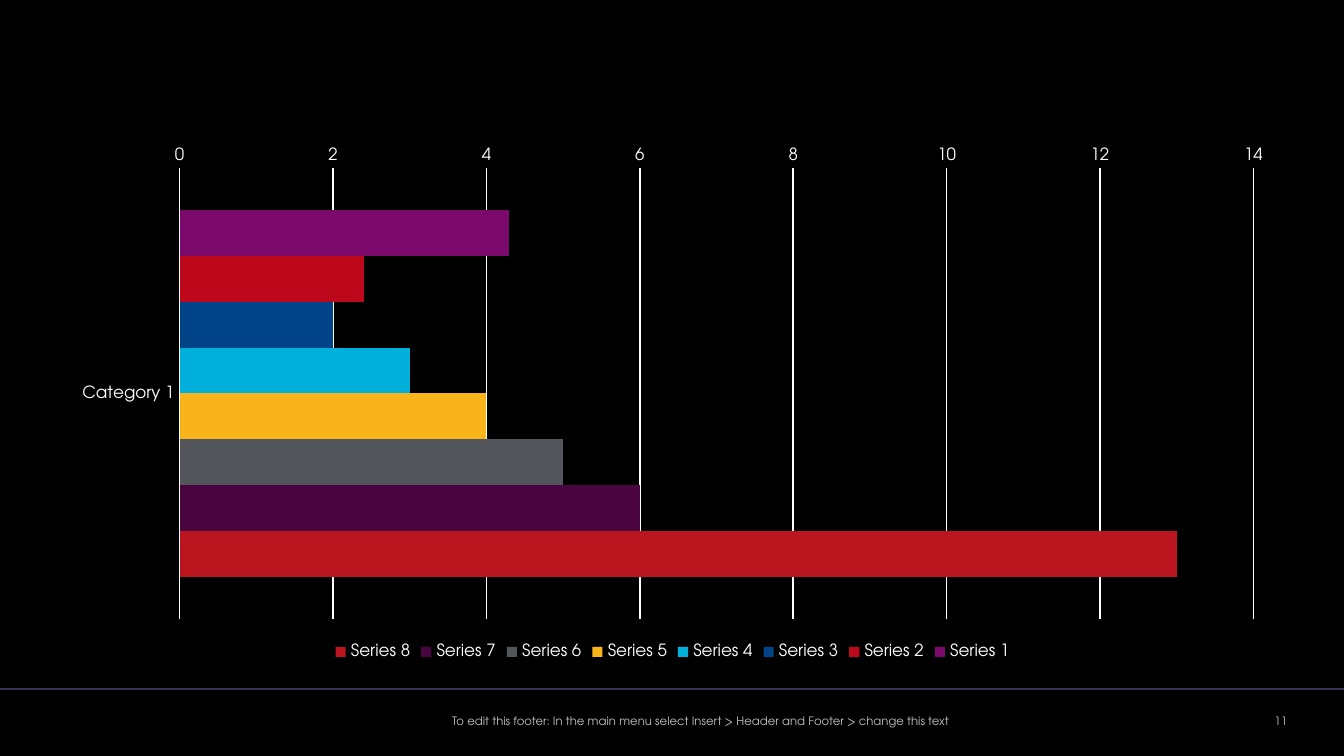
from pptx import Presentation
from pptx.chart.data import CategoryChartData
from pptx.dml.color import RGBColor
from pptx.enum.chart import XL_CHART_TYPE, XL_LEGEND_POSITION, XL_TICK_MARK
from pptx.enum.shapes import MSO_CONNECTOR
from pptx.enum.text import MSO_ANCHOR, PP_ALIGN
from pptx.oxml.ns import qn
from pptx.util import Cm, Pt
from lxml import etree

BAR_CLUSTERED = XL_CHART_TYPE.BAR_CLUSTERED
LEGEND_BOTTOM = XL_LEGEND_POSITION.BOTTOM
NO_TICK = XL_TICK_MARK.NONE
STRAIGHT = MSO_CONNECTOR.STRAIGHT
MIDDLE = MSO_ANCHOR.MIDDLE
CENTER, RIGHT = PP_ALIGN.CENTER, PP_ALIGN.RIGHT

FONT = "TeX Gyre Adventor"
BLACK, WHITE, GREY, NAVY = "000000", "FFFFFF", "BFBFBF", "2F364D"
FOOTER_TOP, FOOTER_HEIGHT = Cm(13.21), Cm(0.84)
FOOTER = ("To edit this footer: In the main menu select Insert > "
          "Header and Footer > change this text")
SERIES = [
    (4.3, "7B096B"),
    (2.4, "BD081B"),
    (2, "004386"),
    (3, "00B0DA"),
    (4, "F9B41B"),
    (5, "52565A"),
    (6, "4A0540"),
    (13, "BB1520"),
]


def rgb(value):
    return RGBColor.from_string(value)


def style_font(font, size, color):
    font.name = FONT
    font.size = Pt(size)
    font.color.rgb = rgb(color)


def style_line(line, color, width):
    line.color.rgb = rgb(color)
    line.width = Pt(width)


def style_axis(axis):
    axis.major_tick_mark = axis.minor_tick_mark = NO_TICK
    style_font(axis.tick_labels.font, 9, WHITE)


def add_bar_chart(slide):
    data = CategoryChartData()
    data.categories = ["Category 1"]
    for number, (value, _) in enumerate(SERIES, 1):
        data.add_series(f"Series {number}", [value])
    chart = slide.shapes.add_chart(
        BAR_CLUSTERED, Cm(1.09), Cm(2.59), Cm(23.24), Cm(9.98), data).chart
    chart.has_title = False
    style_font(chart.font, 9, WHITE)

    bars = chart.plots[0]
    bars.gap_width = 182
    bars.vary_by_categories = False
    for series, (_, color) in zip(bars.series, SERIES):
        series.format.fill.solid()
        series.format.fill.fore_color.rgb = rgb(color)

    categories, values = chart.category_axis, chart.value_axis
    style_axis(categories)
    categories.reverse_order = True
    style_line(categories.format.line, WHITE, 0.75)
    style_axis(values)
    values.format.line.fill.background()
    values.has_major_gridlines = True
    style_line(values.major_gridlines.format.line, WHITE, 0.75)

    chart.has_legend = True
    chart.legend.position = LEGEND_BOTTOM
    chart.legend.include_in_layout = False
    style_font(chart.legend.font, 9, WHITE)


def add_rule(slide):
    rule = slide.shapes.add_connector(
        STRAIGHT, 0, Cm(13.03), Cm(25.48), Cm(13.03))
    style_line(rule.line, NAVY, 1)
    etree.SubElement(rule._element.spPr, qn("a:effectLst"))


def add_footer_text(slide, text, left, width, alignment):
    frame = slide.shapes.add_textbox(
        left, FOOTER_TOP, width, FOOTER_HEIGHT).text_frame
    frame.word_wrap = True
    frame.vertical_anchor = MIDDLE
    frame.text = text
    paragraph = frame.paragraphs[0]
    paragraph.alignment = alignment
    style_font(paragraph.runs[0].font, 6.2, GREY)
    return frame


def main():
    deck = Presentation()
    deck.slide_width, deck.slide_height = Cm(25.4), Cm(14.29)
    slide = deck.slides.add_slide(deck.slide_layouts[6])
    slide.background.fill.solid()
    slide.background.fill.fore_color.rgb = rgb(BLACK)

    add_rule(slide)
    add_bar_chart(slide)
    page_number = add_footer_text(slide, "11", Cm(22.63), Cm(1.7), RIGHT)
    page_number.margin_right = 0
    add_footer_text(slide, FOOTER, Cm(4.45), Cm(17.58), CENTER)
    deck.save("out.pptx")


if __name__ == "__main__":
    main()
